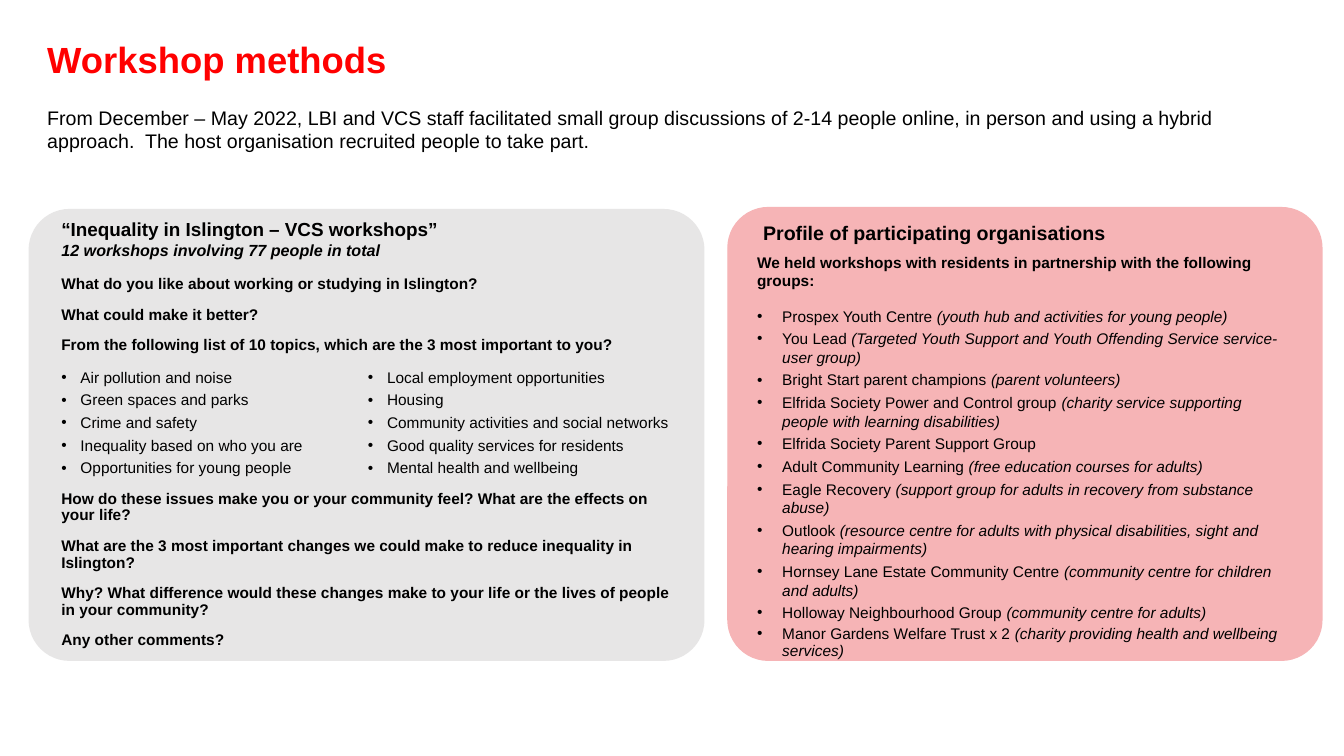
from lxml import etree
from pptx import Presentation, util as u
from pptx.dml.color import RGBColor
from pptx.enum import shapes, text
from pptx.oxml.ns import qn

FONT = "Arial"
BLACK, RED, GREY, PINK = "000000", "FF0000", "E7E6E6", "F6B4B6"

TITLE = "Workshop methods"
INTRO = ("From December – May 2022, LBI and VCS staff facilitated small group discussions "
         "of 2-14 people online, in person and using a hybrid approach.  "
         "The host organisation recruited people to take part.")
WORKSHOPS = "“Inequality in Islington – VCS workshops”"
ATTENDANCE = "12 workshops involving 77 people in total"
OPENING_QUESTIONS = [
    "What do you like about working or studying in Islington?",
    "What could make it better?",
    "From the following list of 10 topics, which are the 3 most important to you?",
]
TOPIC_COLUMNS = [
    (0.51, 2.84, [
        "Air pollution and noise",
        "Green spaces and parks",
        "Crime and safety",
        "Inequality based on who you are",
        "Opportunities for young people",
    ]),
    (3.55, 3.22, [
        "Local employment opportunities",
        "Housing",
        "Community activities and social networks",
        "Good quality services for residents",
        "Mental health and wellbeing",
    ]),
]
CLOSING_QUESTIONS = [
    "How do these issues make you or your community feel? What are the effects on your life?",
    "What are the 3 most important changes we could make to reduce inequality in Islington?",
    "Why? What difference would these changes make to your life or the lives of people in your community?",
    "Any other comments?",
]
PROFILE = "Profile of participating organisations"
PARTNERSHIP = "We held workshops with residents in partnership with the following groups:"
ORGANISATIONS = [
    ("Prospex Youth Centre ", "(youth hub and activities for young people)"),
    ("You Lead ", "(Targeted Youth Support and Youth Offending Service service-user group)"),
    ("Bright Start parent champions ", "(parent volunteers)"),
    ("Elfrida Society Power and Control group ",
     "(charity service supporting people with learning disabilities)"),
    ("Elfrida Society Parent Support Group", ""),
    ("Adult Community Learning ", "(free education courses for adults)"),
    ("Eagle Recovery ", "(support group for adults in recovery from substance abuse)"),
    ("Outlook ", "(resource centre for adults with physical disabilities, sight and hearing impairments)"),
    ("Hornsey Lane Estate Community Centre ", "(community centre for children and adults)"),
    ("Holloway Neighbourhood Group ", "(community centre for adults)"),
    ("Manor Gardens Welfare Trust x 2 ", "(charity providing health and wellbeing services)"),
]
PANELS = [
    ((0.29, 2.08, 6.69, 4.47), GREY),
    ((7.22, 2.06, 5.89, 4.49), PINK),
]
CORNER_RADIUS = 0.4


def color(value):
    return RGBColor.from_string(value)


def add_panel(slide, box, fill):
    panel = slide.shapes.add_shape(shapes.MSO_SHAPE.ROUNDED_RECTANGLE, *map(u.Inches, box))
    panel.adjustments[0] = CORNER_RADIUS / box[3]
    panel.shadow.inherit = False
    panel.fill.solid()
    panel.fill.fore_color.rgb = color(fill)
    panel.line.color.rgb = color(fill)
    panel.line.width = u.Pt(1)


def add_frame(slide, box):
    frame = slide.shapes.add_textbox(*map(u.Inches, box)).text_frame
    frame.word_wrap = True
    return frame


def add_bullet(paragraph, indent):
    properties = paragraph._p.get_or_add_pPr()
    properties.set("marL", str(u.Inches(indent)))
    properties.set("indent", str(-u.Inches(indent)))
    etree.SubElement(properties, qn("a:buFont")).set("typeface", FONT)
    etree.SubElement(properties, qn("a:buChar")).set("char", "•")


def add_paragraph(frame, words, size, bold=False, italic=False, ink=BLACK,
                  before=0, spacing=1.0, indent=0, detail=""):
    first = not frame.paragraphs[0].runs
    paragraph = frame.paragraphs[0] if first else frame.add_paragraph()
    if indent:
        add_bullet(paragraph, indent)
    paragraph.space_before = u.Pt(0 if first else before)
    paragraph.line_spacing = spacing
    font = paragraph.font
    font.name, font.size, font.bold, font.italic = FONT, u.Pt(size), bold, italic
    font.color.rgb = color(ink)
    paragraph.add_run().text = words
    if detail:
        run = paragraph.add_run()
        run.text = detail
        run.font.italic = True


def add_questions(slide, box, questions):
    frame = add_frame(slide, box)
    for question in questions:
        add_paragraph(frame, question, 11, bold=True, before=10, spacing=0.9)


def main():
    presentation = Presentation()
    presentation.slide_width, presentation.slide_height = u.Inches(13.33), u.Inches(7.5)
    slide = presentation.slides.add_slide(presentation.slide_layouts[6])

    title = add_frame(slide, (0.37, 0.35, 11.5, 0.52))
    title.vertical_anchor = text.MSO_ANCHOR.MIDDLE
    add_paragraph(title, TITLE, 26, bold=True, ink=RED, spacing=0.9)
    add_paragraph(add_frame(slide, (0.37, 1, 11.77, 0.57)), INTRO, 14)

    for box, fill in PANELS:
        add_panel(slide, box, fill)

    heading = add_frame(slide, (0.51, 2.11, 4.31, 0.71))
    add_paragraph(heading, WORKSHOPS, 13.5, bold=True)
    add_paragraph(heading, ATTENDANCE, 11.5, bold=True, italic=True)
    add_questions(slide, (0.51, 2.69, 5.76, 0.95), OPENING_QUESTIONS)
    for left, width, topics in TOPIC_COLUMNS:
        column = add_frame(slide, (left, 3.6, width, 1.26))
        for topic in topics:
            add_paragraph(column, topic, 11, before=3, indent=0.19)
    add_questions(slide, (0.51, 4.82, 6.38, 1.62), CLOSING_QUESTIONS)

    profile = add_frame(slide, (7.47, 2.17, 4.7, 0.38))
    add_paragraph(profile, PROFILE, 14, bold=True, spacing=0.9)
    groups = add_frame(slide, (7.41, 2.46, 5.49, 3.87))
    add_paragraph(groups, PARTNERSHIP, 11, bold=True)
    for index, (name, detail) in enumerate(ORGANISATIONS):
        last = index == len(ORGANISATIONS) - 1
        add_paragraph(groups, name, 11, before=3 if index else 12,
                      spacing=0.9 if last else 1.0, indent=0.25, detail=detail)

    presentation.save("out.pptx")


if __name__ == "__main__":
    main()
